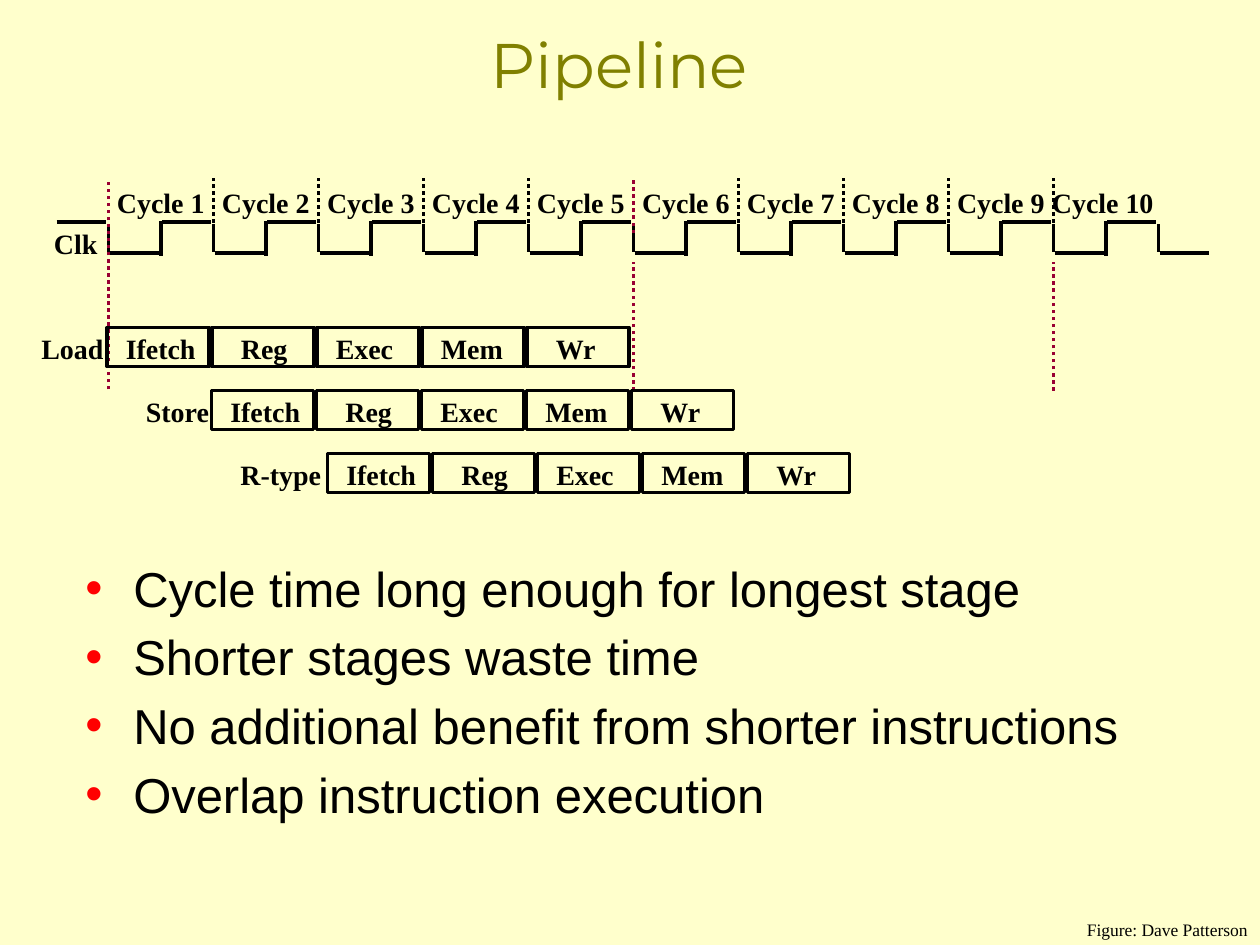
from lxml.etree import SubElement
from pptx import Presentation
from pptx.dml.color import RGBColor
from pptx.enum.dml import MSO_LINE
from pptx.enum.shapes import MSO_CONNECTOR, MSO_SHAPE
from pptx.enum.text import MSO_AUTO_SIZE, PP_ALIGN
from pptx.oxml.ns import qn
from pptx.util import Inches, Pt

CREAM = RGBColor(0xFF, 0xFF, 0xCC)
OLIVE = RGBColor(0x80, 0x80, 0x00)
BLACK = RGBColor(0x00, 0x00, 0x00)
CRIMSON = RGBColor(0x99, 0x00, 0x33)
BULLET_RED = "FF0000"
SERIF = "Times New Roman"

CYCLE_COUNT = 10
CYCLE_WIDTH = 2.5 / 3
CLOCK_LEFT = 0.86
CLOCK_HIGH, CLOCK_LOW = 1.76, 2.01
MARKED_EDGE = 5

# Stage name, text offset from its box, text width
STAGES = [("Ifetch", 0.05, 0.78), ("Reg", 0.13, 0.59), ("Exec", 0.05, 0.68),
          ("Mem", 0.05, 0.71), ("Wr", 0.13, 0.54)]
# Instruction, label left, label width, left of first stage
INSTRUCTIONS = [("Load", 0.23, 0.7, 0.85), ("Store", 1.06, 0.71, 1.68),
                ("R-type", 1.81, 0.85, 2.6)]
POINTS = ["Cycle time long enough for longest stage",
          "Shorter stages waste time",
          "No additional benefit from shorter instructions",
          "Overlap instruction execution"]


def add_text(shapes, text, left, top, width, height, *, size=16, font=SERIF,
             color=BLACK, bold=False, align=None, wrap=False, grow=True,
             margins=(0.1, 0.05), line_spacing=None, bulleted=False):
    """Add a text box with one paragraph for each line of text."""
    box = shapes.add_textbox(Inches(left), Inches(top), Inches(width), Inches(height))
    frame = box.text_frame
    frame.word_wrap = wrap
    frame.auto_size = MSO_AUTO_SIZE.SHAPE_TO_FIT_TEXT if grow else MSO_AUTO_SIZE.NONE
    frame.margin_left = frame.margin_right = Inches(margins[0])
    frame.margin_top = frame.margin_bottom = Inches(margins[1])
    frame.text = text
    for paragraph in frame.paragraphs:
        paragraph.alignment = align
        paragraph.line_spacing = line_spacing
        if bulleted:
            add_bullet(paragraph)
        run_font = paragraph.runs[0].font
        run_font.name = font
        run_font.size = Pt(size)
        run_font.bold = bold
        run_font.color.rgb = color


def add_bullet(paragraph):
    """Give a paragraph a red bullet, a hanging indent and 20% space before."""
    properties = paragraph._p.get_or_add_pPr()
    properties.set("marL", str(Inches(0.38)))
    properties.set("indent", str(Inches(-0.38)))
    space = SubElement(properties, qn("a:spcBef"))
    SubElement(space, qn("a:spcPct"), val="20000")
    bullet_color = SubElement(properties, qn("a:buClr"))
    SubElement(bullet_color, qn("a:srgbClr"), val=BULLET_RED)
    SubElement(properties, qn("a:buFont"), typeface="Arial")
    SubElement(properties, qn("a:buChar"), char="•")


def add_line(shapes, x1, y1, x2, y2, color=BLACK, dotted=False):
    connector = shapes.add_connector(MSO_CONNECTOR.STRAIGHT, Inches(x1), Inches(y1),
                                     Inches(x2), Inches(y2))
    connector.line.color.rgb = color
    connector.line.width = Pt(2)
    if dotted:
        connector.line.dash_style = MSO_LINE.ROUND_DOT
    SubElement(connector._element.spPr, qn("a:effectLst"))


def edge_x(index):
    return CLOCK_LEFT + index * CYCLE_WIDTH


def add_clock(shapes):
    level_width = 0.39
    add_line(shapes, 0.45, CLOCK_HIGH, 0.45 + level_width, CLOCK_HIGH)
    for index in range(CYCLE_COUNT + 1):
        x = edge_x(index)
        add_line(shapes, x, 1.78, x, 2)
        add_line(shapes, x + 0.01, CLOCK_LOW, x + 0.01 + level_width, CLOCK_LOW)
        if index == CYCLE_COUNT:
            break
        rise = x + CYCLE_WIDTH / 2
        add_line(shapes, rise, 2.03, rise, 1.75)
        add_line(shapes, rise + 0.01, CLOCK_HIGH, rise + 0.01 + level_width, CLOCK_HIGH)
        if index not in (0, MARKED_EDGE):
            add_line(shapes, x, 1.77, x, 1.41, dotted=True)
        last = index == CYCLE_COUNT - 1
        add_text(shapes, f"Cycle {index + 1}", 8.25 if last else x - 0.03, 1.42,
                 1.02 if last else 0.91, 0.36, bold=True)
    add_text(shapes, "Clk", 0.33, 1.75, 0.57, 0.36, bold=True)


def add_cycle_markers(shapes):
    for index, bottom, top in [(MARKED_EDGE, 3.1, 2.08), (9, 3.1, 2.08),
                               (MARKED_EDGE, 1.85, 1.42), (0, 3.09, 1.42)]:
        add_line(shapes, edge_x(index), bottom, edge_x(index), top,
                 color=CRIMSON, dotted=True)


def add_instruction(shapes, name, label_left, label_width, left, top):
    add_text(shapes, name, label_left, top, label_width, 0.36, bold=True)
    group = shapes.add_group_shape().shapes
    for index, (stage, offset, width) in enumerate(STAGES):
        x = left + index * CYCLE_WIDTH
        box = group.add_shape(MSO_SHAPE.RECTANGLE, Inches(x), Inches(top + 0.02),
                              Inches(0.81), Inches(0.31))
        box.shadow.inherit = False
        box.fill.background()
        box.line.color.rgb = BLACK
        box.line.width = Pt(2)
        add_text(group, stage, x + offset, top, width, 0.36, bold=True)


def main():
    presentation = Presentation()
    presentation.slide_width = Inches(10)
    presentation.slide_height = Inches(7.5)
    slide = presentation.slides.add_slide(presentation.slide_layouts[6])
    slide.background.fill.solid()
    slide.background.fill.fore_color.rgb = CREAM
    shapes = slide.shapes

    add_text(shapes, "Pipeline", 0.58, 0.17, 8.67, 0.76, size=36, font="Montserrat",
             color=OLIVE, align=PP_ALIGN.CENTER, wrap=True, margins=(0.07, 0.03))
    add_text(shapes, "Figure: Dave Patterson", 8.52, 7.33, 1.48, 0.17, size=10,
             align=PP_ALIGN.RIGHT, line_spacing=0.4)
    add_text(shapes, "\n".join(POINTS), 0.58, 4.38, 8.67, 2.79, size=28, font="Arial",
             wrap=True, grow=False, bulleted=True)
    add_clock(shapes)
    add_cycle_markers(shapes)
    for row, instruction in enumerate(INSTRUCTIONS):
        add_instruction(shapes, *instruction, top=2.58 + row * 0.5)
    presentation.save("out.pptx")


if __name__ == "__main__":
    main()
